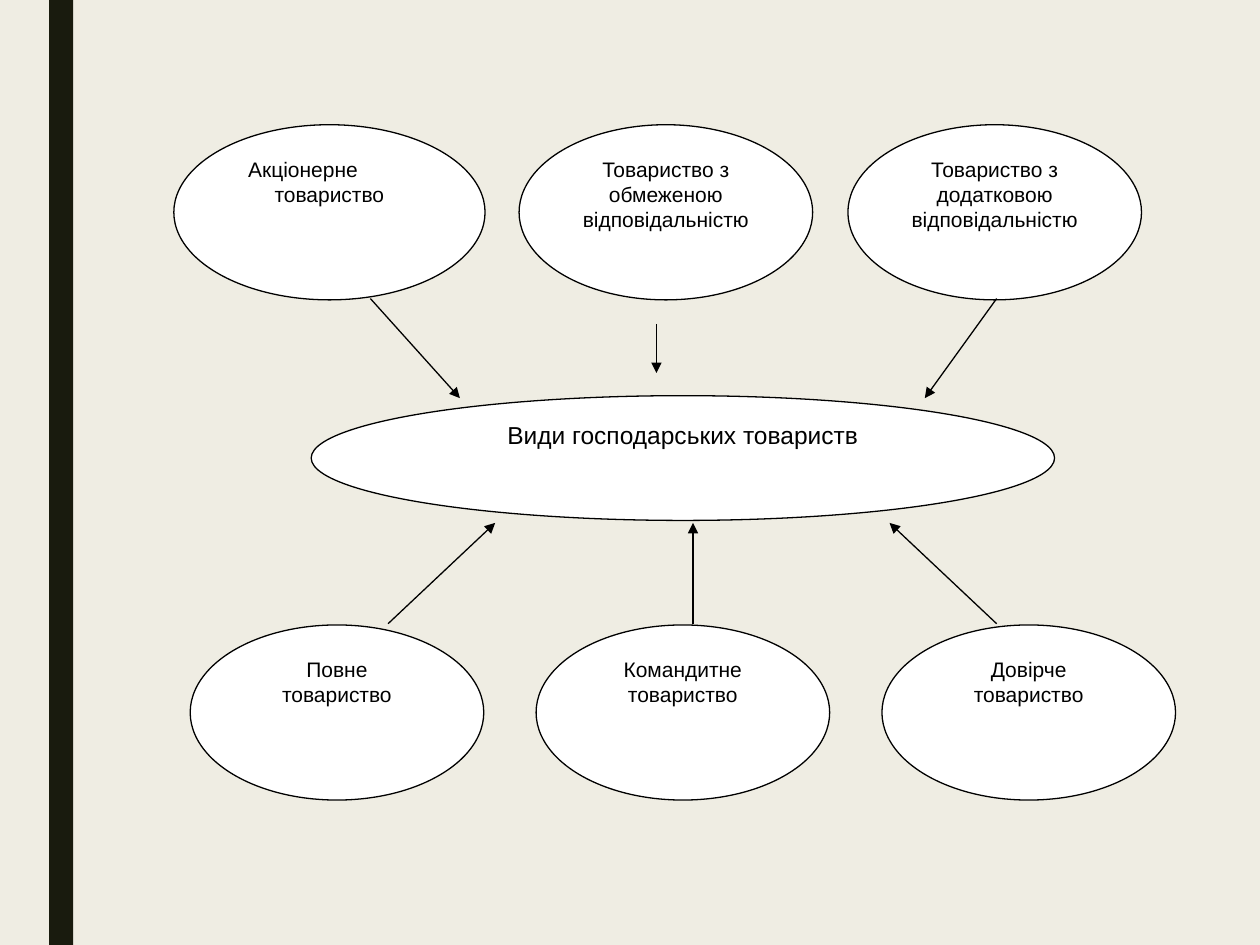
from dataclasses import dataclass

from pptx import Presentation
from pptx.dml.color import RGBColor
from pptx.enum.shapes import MSO_CONNECTOR, MSO_SHAPE
from pptx.enum.text import MSO_ANCHOR, PP_ALIGN
from pptx.oxml.ns import qn
from pptx.util import Inches, Pt
from lxml.etree import SubElement


@dataclass(frozen=True)
class Theme:
    """Colours, type and line sizes of the slide."""
    background: str = "EFEDE3"
    bar: str = "191B0E"
    paper: str = "FFFFFF"
    ink: str = "000000"
    font: str = "Arial"
    body: int = 12
    heading: int = 14
    line: float = 0.75


THEME = Theme()
OVAL_WIDTH, OVAL_HEIGHT = 2.33, 1.39
TOP_ROW, BOTTOM_ROW = 0.99, 4.96
BOTTOM_LEFT, BOTTOM_STEP = 1.51, 2.745
TOP_OVALS = [
    (1.38, 2.47, ["Акціонерне", "товариство"]),
    (4.12, OVAL_WIDTH, ["Товариство з", "обмеженою", "відповідальністю"]),
    (6.73, OVAL_WIDTH, ["Товариство з", "додатковою", "відповідальністю"]),
]
BOTTOM_OVALS = [["Повне", "товариство"], ["Командитне", "товариство"], ["Довірче товариство"]]
ARROWS = [
    ((2.94, 2.37), (3.65, 3.16)),
    ((5.21, 2.57), (5.21, 2.96)),
    ((7.91, 2.37), (7.34, 3.16)),
    ((3.08, 4.95), (3.93, 4.15)),
    ((5.5, 4.95), (5.5, 4.15)),
    ((7.91, 4.95), (7.06, 4.15)),
]


def colour(value):
    """Turn a hex string into a colour."""
    return RGBColor.from_string(value)


def write_text(shape, lines, *, size=THEME.body, ink=THEME.ink, align=PP_ALIGN.CENTER):
    """Write one paragraph per line at the top of a shape."""
    frame = shape.text_frame
    frame.word_wrap = True
    frame.vertical_anchor = MSO_ANCHOR.TOP
    for index, line in enumerate(lines):
        para = frame.add_paragraph() if index else frame.paragraphs[0]
        para.alignment = align
        span = para.add_run()
        span.text = line
        span.font.name = THEME.font
        span.font.size = Pt(size)
        span.font.color.rgb = colour(ink)


def add_box(page, kind, left, top, width, height, *, fill, line=None):
    """Add a flat filled shape, outlined if a line colour is given."""
    box = page.shapes.add_shape(kind, *map(Inches, (left, top, width, height)))
    box.shadow.inherit = False
    box.fill.solid()
    box.fill.fore_color.rgb = colour(fill)
    if line:
        box.line.color.rgb = colour(line)
        box.line.width = Pt(THEME.line)
    else:
        box.line.fill.background()
    return box


def add_oval(page, left, top, lines, *, width=OVAL_WIDTH, height=OVAL_HEIGHT, size=THEME.body):
    """Add an outlined oval with its label."""
    oval = add_box(page, MSO_SHAPE.OVAL, left, top, width, height,
                   fill=THEME.paper, line=THEME.ink)
    write_text(oval, lines, size=size)
    return oval


def add_arrow(page, start, end):
    """Add a straight line with a triangle at its end."""
    arrow = page.shapes.add_connector(MSO_CONNECTOR.STRAIGHT, *map(Inches, start + end))
    arrow.line.color.rgb = colour(THEME.ink)
    arrow.line.width = Pt(THEME.line)
    SubElement(arrow.line._get_or_add_ln(), qn("a:tailEnd"), type="triangle")
    SubElement(arrow._element.spPr, qn("a:effectLst"))


def indent_left(para, distance):
    """Set a paragraph flush left at an indent."""
    para.alignment = PP_ALIGN.LEFT
    properties = para._p.get_or_add_pPr()
    properties.set("marL", str(Inches(distance)))
    properties.set("indent", "0")


def main():
    """Build the diagram of company types."""
    deck = Presentation()
    deck.slide_width, deck.slide_height = Inches(10), Inches(7.5)
    page = deck.slides.add_slide(deck.slide_layouts[6])
    page.background.fill.solid()
    page.background.fill.fore_color.rgb = colour(THEME.background)
    add_box(page, MSO_SHAPE.RECTANGLE, 0.39, 0, 0.19, 7.5, fill=THEME.bar)

    top_ovals = [add_oval(page, left, TOP_ROW, lines, width=width)
                 for left, width, lines in TOP_OVALS]
    indent_left(top_ovals[0].text_frame.paragraphs[0], 0.13)
    for column, lines in enumerate(BOTTOM_OVALS):
        add_oval(page, BOTTOM_LEFT + column * BOTTOM_STEP, BOTTOM_ROW, lines)
    add_oval(page, 2.47, 3.14, ["Види господарських товариств"],
             width=5.9, height=0.99, size=THEME.heading)
    for start, end in ARROWS:
        add_arrow(page, start, end)
    deck.save("out.pptx")


if __name__ == "__main__":
    main()
